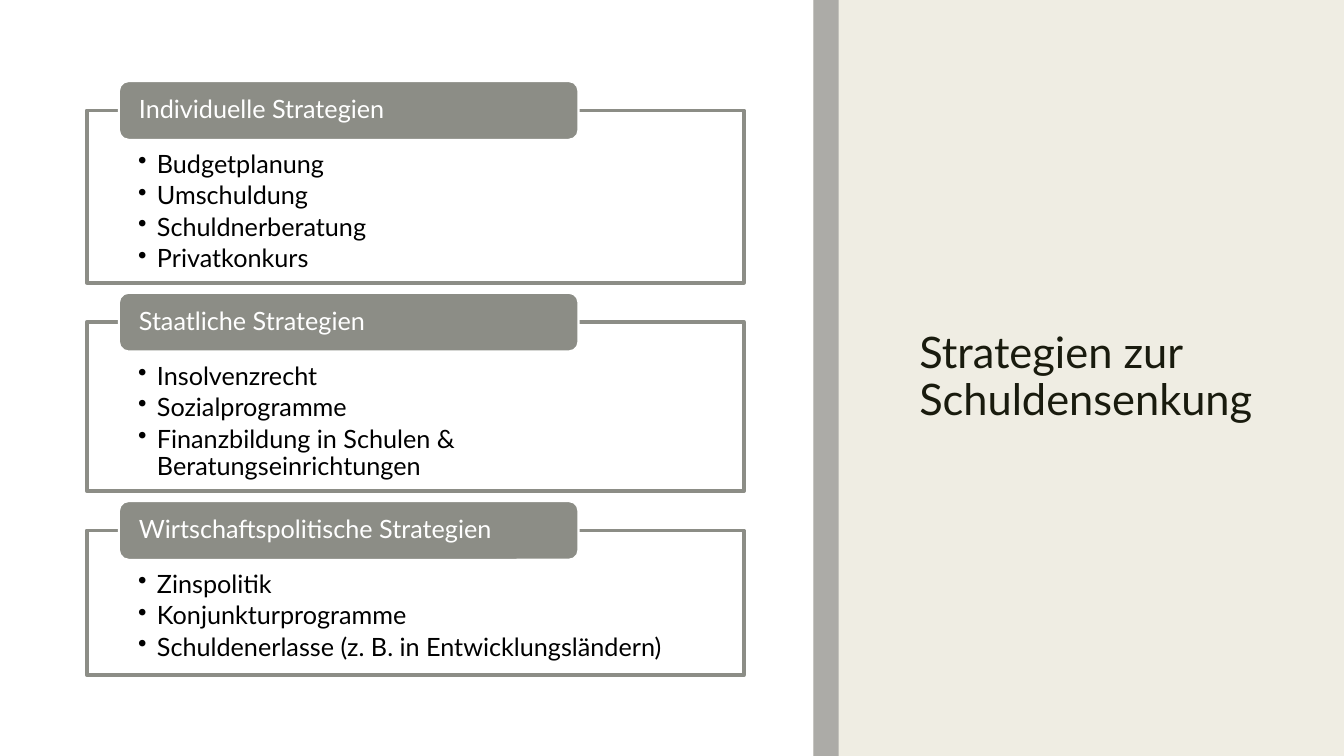
"""Build the slide on strategies for reducing debt."""
from dataclasses import dataclass

from lxml import etree
from pptx import Presentation
from pptx import util as u
from pptx.dml.color import RGBColor
from pptx.enum import shapes, text
from pptx.oxml import ns
from pptx.shapes.autoshape import Shape
from pptx.slide import Slide
from pptx.text.text import TextFrame, _Paragraph

CELL = u.Inches(1) / 12
COLUMNS, ROWS = 160, 90


@dataclass(frozen=True)
class Theme:
    """Colours, font and type sizes of the slide."""
    font: str = "Lato"
    paper: str = "FFFFFF"
    panel: str = "EFEDE3"
    stripe: str = "808080"
    stripe_opacity: int = 60
    accent: str = "8C8D86"
    title: str = "191B0E"
    ink: str = "000000"
    title_size: int = 31
    text_size: int = 18
    frame_line: float = 2.75
    tab_line: float = 1.5


@dataclass(frozen=True)
class Area:
    """A rectangle in grid columns and rows."""
    column: float
    row: float
    columns: float
    rows: float


@dataclass(frozen=True)
class Strategy:
    """A headed list and the height of its frame in rows."""
    heading: str
    measures: tuple[str, ...]
    rows: float


THEME = Theme()
WHITE_AREA = Area(0, 0, 96.84, ROWS)
STRIPE_AREA = Area(96.84, 0, 3, ROWS)
TITLE_AREA = Area(108.24, 8.4, 43.32, 73.2)
FRAME_COLUMN, FRAME_COLUMNS, FIRST_ROW, ROW_GAP = 10.32, 78.24, 13.15, 4.7
TAB_COLUMN, TAB_COLUMNS, TAB_ROWS = 14.16, 54.72, 7
BULLET_INDENT = 2.25

STRATEGIES = (
    Strategy("Individuelle Strategien",
             ("Budgetplanung", "Umschuldung", "Schuldnerberatung", "Privatkonkurs"), 20.5),
    Strategy("Staatliche Strategien",
             ("Insolvenzrecht", "Sozialprogramme",
              "Finanzbildung in Schulen & Beratungseinrichtungen"), 20.1),
    Strategy("Wirtschaftspolitische Strategien",
             ("Zinspolitik", "Konjunkturprogramme",
              "Schuldenerlasse (z. B. in Entwicklungsländern)"), 17.2),
)


def cells(count: float) -> u.Emu:
    """Convert grid cells to a length."""
    return u.Emu(round(count * CELL))


def place(shape: Shape, area: Area) -> None:
    """Move and size a shape to an area."""
    shape.left, shape.top = cells(area.column), cells(area.row)
    shape.width, shape.height = cells(area.columns), cells(area.rows)


def add_box(slide: Slide, area: Area, fill: str, line: str = "", line_width: float = 0,
            kind: shapes.MSO_SHAPE = shapes.MSO_SHAPE.RECTANGLE) -> Shape:
    """Add a filled shape, outlined when a line colour is given."""
    shape = slide.shapes.add_shape(kind, 0, 0, 0, 0)
    place(shape, area)
    shape.shadow.inherit = False
    shape.fill.solid()
    shape.fill.fore_color.rgb = RGBColor.from_string(fill)
    if line:
        shape.line.color.rgb = RGBColor.from_string(line)
        shape.line.width = u.Pt(line_width)
    else:
        shape.line.fill.background()
    return shape


def set_opacity(shape: Shape, percent: int) -> None:
    """Make a solid fill partly transparent."""
    color = shape.fill._xPr.find(ns.qn("a:solidFill"))[0]
    etree.SubElement(color, ns.qn("a:alpha"), val=str(percent * 1000))


def set_frame(frame: TextFrame, anchor: text.MSO_ANCHOR,
              side: float, top: float = 0, bottom: float = 0) -> None:
    """Wrap a text frame and set its anchor and insets."""
    frame.word_wrap = True
    frame.vertical_anchor = anchor
    frame.margin_left = frame.margin_right = cells(side)
    frame.margin_top, frame.margin_bottom = cells(top), cells(bottom)


def write(paragraph: _Paragraph, words: str, size: int, color: str) -> None:
    """Write one left-aligned run into a paragraph."""
    paragraph.alignment = text.PP_ALIGN.LEFT
    paragraph.line_spacing = 0.9
    run = paragraph.add_run()
    run.text = words
    run.font.name = THEME.font
    run.font.size = u.Pt(size)
    run.font.color.rgb = RGBColor.from_string(color)


def add_bullet(paragraph: _Paragraph) -> None:
    """Give a paragraph a hanging bullet."""
    paragraph.level = 1
    paragraph.space_after = u.Pt(3)
    properties = paragraph._p.get_or_add_pPr()
    properties.set("marL", str(cells(BULLET_INDENT)))
    properties.set("indent", str(-cells(BULLET_INDENT)))
    etree.SubElement(properties, ns.qn("a:buChar"), char="•")


def add_strategy(slide: Slide, strategy: Strategy, row: float) -> None:
    """Draw a framed list with its heading tab."""
    frame_area = Area(FRAME_COLUMN, row, FRAME_COLUMNS, strategy.rows)
    body = add_box(slide, frame_area, THEME.paper, THEME.accent, THEME.frame_line).text_frame
    set_frame(body, text.MSO_ANCHOR.TOP, 6.12, 4.92, 1.68)
    for index, measure in enumerate(strategy.measures):
        paragraph = body.add_paragraph() if index else body.paragraphs[0]
        write(paragraph, measure, THEME.text_size, THEME.ink)
        add_bullet(paragraph)
    tab_area = Area(TAB_COLUMN, row - TAB_ROWS / 2, TAB_COLUMNS, TAB_ROWS)
    tab = add_box(slide, tab_area, THEME.accent, THEME.paper, THEME.tab_line,
                  shapes.MSO_SHAPE.ROUNDED_RECTANGLE).text_frame
    set_frame(tab, text.MSO_ANCHOR.MIDDLE, 2.04)
    write(tab.paragraphs[0], strategy.heading, THEME.text_size, THEME.paper)


def add_title(slide: Slide, words: str) -> None:
    """Place and format the title placeholder."""
    title = slide.shapes.title
    place(title, TITLE_AREA)
    set_frame(title.text_frame, text.MSO_ANCHOR.MIDDLE, 1.2, 0.6, 0.6)
    title.text_frame.auto_size = text.MSO_AUTO_SIZE.NONE
    write(title.text_frame.paragraphs[0], words, THEME.title_size, THEME.title)


def main() -> None:
    """Build and save the presentation."""
    presentation = Presentation()
    presentation.slide_width, presentation.slide_height = cells(COLUMNS), cells(ROWS)
    slide = presentation.slides.add_slide(presentation.slide_layouts[5])
    slide.background.fill.solid()
    slide.background.fill.fore_color.rgb = RGBColor.from_string(THEME.panel)
    add_title(slide, "Strategien zur Schuldensenkung")
    add_box(slide, WHITE_AREA, THEME.paper)
    set_opacity(add_box(slide, STRIPE_AREA, THEME.stripe), THEME.stripe_opacity)
    row = FIRST_ROW
    for strategy in STRATEGIES:
        add_strategy(slide, strategy, row)
        row += strategy.rows + ROW_GAP
    presentation.save("out.pptx")


if __name__ == "__main__":
    main()
